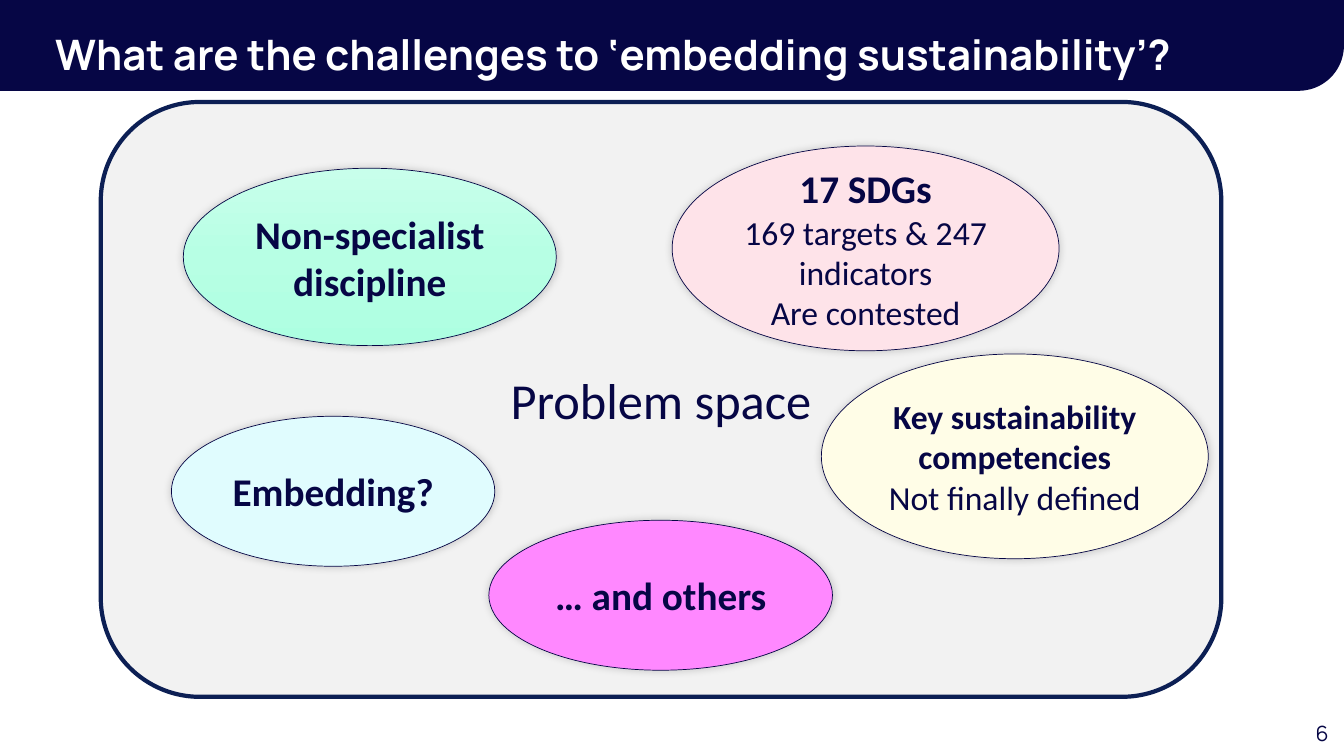
from copy import deepcopy

from lxml.etree import SubElement
from pptx import Presentation
from pptx.dml.color import RGBColor
from pptx.enum.shapes import MSO_SHAPE as Shape
from pptx.enum.text import MSO_ANCHOR as Anchor, PP_ALIGN as Align
from pptx.oxml.ns import qn
from pptx.util import Cm, Pt

NAVY = RGBColor(0x06, 0x06, 0x45)
FRAME_BLUE = RGBColor(0x0C, 0x1F, 0x54)
WHITE = RGBColor(0xFF, 0xFF, 0xFF)
GREY = RGBColor(0xF2, 0xF2, 0xF2)
MINTS = [RGBColor(0xC8, 0xFF, 0xEB), RGBColor(0xB7, 0xFF, 0xE4), RGBColor(0xAD, 0xFF, 0xE1)]
PINK = RGBColor(0xFE, 0xE3, 0xE9)
ICE = RGBColor(0xE0, 0xFC, 0xFE)
CREAM = RGBColor(0xFF, 0xFD, 0xE7)
MAGENTA = RGBColor(0xFF, 0x88, 0xFF)


def write(paragraph, text, size, font="Calibri", color=NAVY, bold=False, align=Align.CENTER):
    """Add text to a paragraph; a newline becomes a line break."""
    paragraph.alignment = align
    for index, line in enumerate(text.split("\n")):
        if index:
            paragraph.add_line_break()
        if line:
            run = paragraph.add_run()
            run.text = line
            run.font.name = font
            run.font.size = Pt(size)
            run.font.bold = bold
            run.font.color.rgb = color


def fill_gradient(shape, colors):
    """Fill from top to bottom through three evenly spaced colours."""
    shape.fill.gradient()
    shape.fill.gradient_angle = 270
    stop_list = shape._element.spPr.find(qn("a:gradFill")).find(qn("a:gsLst"))
    stop_list.insert(1, deepcopy(stop_list[0]))
    for index, (stop, color) in enumerate(zip(shape.fill.gradient_stops, colors)):
        stop.position = index / 2
        stop.color.rgb = color


def add_soft_shadow(shape):
    effects = shape._element.spPr.find(qn("a:effectLst"))
    shadow = SubElement(effects, qn("a:outerShdw"), blurRad=str(Pt(6)), dist="0",
                        dir="13500000", algn="ctr", rotWithShape="0")
    black = SubElement(shadow, qn("a:srgbClr"), val="000000")
    SubElement(black, qn("a:alpha"), val="20000")


class SlideBuilder:
    font = "Manrope"

    def __init__(self, slide):
        self.slide = slide

    def text_box(self, box, text, **text_format):
        shape = self.slide.shapes.add_textbox(*map(Cm, box))
        shape.text_frame.word_wrap = True
        paragraph = shape.text_frame.paragraphs[0]
        write(paragraph, text, font=self.font, **text_format)
        return paragraph

    def shape(self, kind, box, fill, line=None, width=0):
        shape = self.slide.shapes.add_shape(kind, *map(Cm, box))
        shape.shadow.inherit = False
        if isinstance(fill, list):
            fill_gradient(shape, fill)
        else:
            shape.fill.solid()
            shape.fill.fore_color.rgb = fill
        if line is None:
            shape.line.fill.background()
        else:
            shape.line.color.rgb = line
            shape.line.width = Pt(width)
        shape.text_frame.word_wrap = True
        shape.text_frame.vertical_anchor = Anchor.MIDDLE
        return shape

    def header(self, title):
        band = self.shape(Shape.ROUND_1_RECTANGLE, (-0.03, 0, 33.9, 2.29), NAVY)
        band.adjustments[0] = 0.5
        band._element.spPr.find(qn("a:xfrm")).set("flipV", "1")
        paragraph = self.text_box((1.14, 0.46, 31.55, 1.37), title, size=30,
                                  color=WHITE, bold=True, align=Align.LEFT)
        paragraph.line_spacing = 1.1
        paragraph.space_before = Pt(10)

    def problem_space(self, box, text):
        frame = self.shape(Shape.ROUNDED_RECTANGLE, box, GREY, FRAME_BLUE, 3)
        write(frame.text_frame.paragraphs[0], text, 36)

    def challenge(self, box, fill, *paragraphs):
        """Draw an ellipse; each paragraph is a list of (text, size, bold)."""
        ellipse = self.shape(Shape.OVAL, box, fill, NAVY, 0.5)
        add_soft_shadow(ellipse)
        frame = ellipse.text_frame
        for index, runs in enumerate(paragraphs):
            paragraph = frame.add_paragraph() if index else frame.paragraphs[0]
            for text, size, bold in runs:
                write(paragraph, text, size, bold=bold)


def main():
    presentation = Presentation()
    presentation.slide_width = Cm(33.87)
    presentation.slide_height = Cm(19.05)
    builder = SlideBuilder(presentation.slides.add_slide(presentation.slide_layouts[6]))

    builder.text_box((31.98, 18.03, 1.75, 0.89), "6", size=15, align=Align.RIGHT)
    builder.header("What are the challenges to ‘embedding sustainability’?")
    builder.problem_space((2.54, 2.57, 28.24, 14.99), "Problem space")

    builder.challenge((4.62, 4.24, 9.4, 4.47), MINTS,
                      [("Non-specialist discipline", 28, True)])
    builder.challenge((16.94, 3.68, 9.75, 5.16), PINK,
                      [("17 SDGs\n", 28, True),
                       ("169 targets & 247 indicators\nAre contested", 24, False)])
    builder.challenge((4.32, 10.49, 8.15, 3.78), ICE, [("Embedding?", 28, True)])
    builder.challenge((20.7, 8.92, 9.75, 5.16), CREAM,
                      [("Key sustainability competencies", 24, True)],
                      [("Not finally defined", 24, False)])
    builder.challenge((12.32, 13.11, 8.66, 3.78), MAGENTA, [("… and others", 28, True)])

    presentation.save("out.pptx")


if __name__ == "__main__":
    main()
